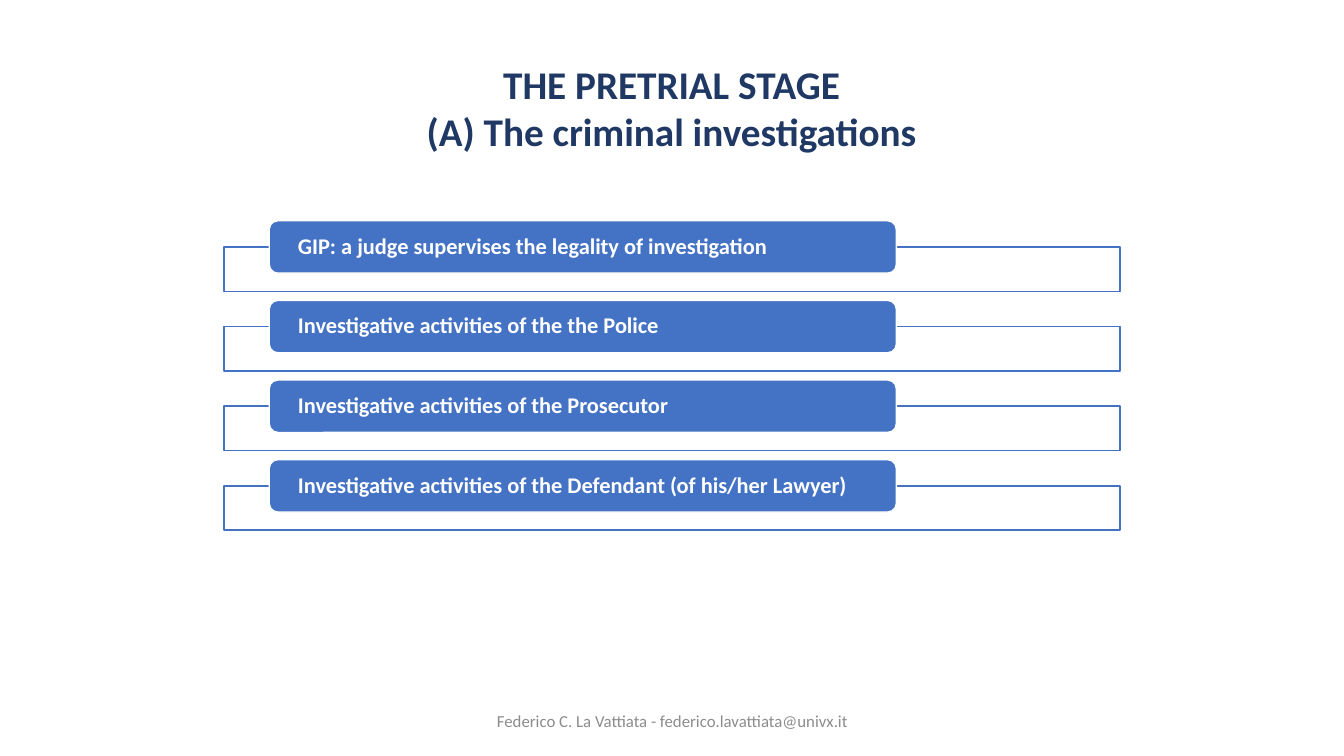
from lxml.etree import SubElement
from pptx import Presentation
from pptx.dml.color import RGBColor
from pptx.enum.shapes import MSO_SHAPE
from pptx.enum.text import MSO_ANCHOR, MSO_AUTO_SIZE, PP_ALIGN
from pptx.oxml.ns import qn
from pptx.util import Inches, Pt

NAVY = RGBColor(0x20, 0x38, 0x64)
BLUE = RGBColor(0x44, 0x72, 0xC4)
GRAY = RGBColor(0x8C, 0x8C, 0x8C)
WHITE = RGBColor(0xFF, 0xFF, 0xFF)

ACTORS = [
    "GIP: a judge supervises the legality of investigation",
    "Investigative activities of the the Police",
    "Investigative activities of the Prosecutor",
    "Investigative activities of the Defendant (of his/her Lawyer)",
]
FIRST_TOP = 2.19
ROW_STEP = 0.79


class SlideBuilder:
    """Hold the slide and its text style, and add each kind of element."""

    font_name = "Calibri"

    def __init__(self, slide):
        self.slide = slide

    def set_text(self, frame, lines, size, color, bold, align):
        frame.word_wrap = True
        frame.text = "\n".join(lines)
        for paragraph in frame.paragraphs:
            paragraph.alignment = align
            font = paragraph.font
            font.name = self.font_name
            font.size = Pt(size)
            font.bold = bold
            font.color.rgb = color

    def title(self, lines):
        heading = self.slide.shapes.title
        heading.left, heading.top = Inches(0.72), Inches(0.55)
        heading.width, heading.height = Inches(11.88), Inches(1.04)
        frame = heading.text_frame
        self.set_text(frame, lines, 28, NAVY, True, PP_ALIGN.CENTER)
        frame.vertical_anchor = MSO_ANCHOR.TOP
        frame.auto_size = MSO_AUTO_SIZE.NONE

    def footer(self, credit):
        contact = self.slide.shapes.add_textbox(
            Inches(4.42), Inches(6.95), Inches(4.5), Inches(0.4))
        self.set_text(contact.text_frame, [credit], 12, GRAY, False, PP_ALIGN.CENTER)
        contact.text_frame.vertical_anchor = MSO_ANCHOR.MIDDLE

    def box(self, kind, left, top, width, height, fill, line):
        shape = self.slide.shapes.add_shape(
            kind, Inches(left), Inches(top), Inches(width), Inches(height))
        shape.shadow.inherit = False
        shape.fill.solid()
        shape.fill.fore_color.rgb = fill
        shape.line.color.rgb = line
        shape.line.width = Pt(1)
        return shape

    def frame(self, top):
        panel = self.box(MSO_SHAPE.RECTANGLE, 2.22, top, 8.89, 0.44, WHITE, BLUE)
        tint = panel._element.spPr.find(qn("a:solidFill"))[0]
        SubElement(tint, qn("a:alpha"), val="90000")

    def label(self, wording, top):
        pill = self.box(MSO_SHAPE.ROUNDED_RECTANGLE, 2.67, top, 6.22, 0.52, BLUE, WHITE)
        frame = pill.text_frame
        self.set_text(frame, [wording], 16, WHITE, True, PP_ALIGN.LEFT)
        frame.margin_left = frame.margin_right = Inches(0.26)
        frame.margin_top = frame.margin_bottom = 0
        frame.vertical_anchor = MSO_ANCHOR.MIDDLE
        frame.paragraphs[0].line_spacing = 0.9


def main():
    deck = Presentation()
    deck.slide_width, deck.slide_height = Inches(13.33), Inches(7.5)
    builder = SlideBuilder(deck.slides.add_slide(deck.slide_layouts[5]))
    builder.title(["THE PRETRIAL STAGE", "(A) The criminal investigations"])
    for row, actor in enumerate(ACTORS):
        top = FIRST_TOP + row * ROW_STEP
        builder.frame(top + 0.26)
        builder.label(actor, top)
    builder.footer("Federico C. La Vattiata - federico.lavattiata@univx.it")
    deck.save("out.pptx")


if __name__ == "__main__":
    main()
